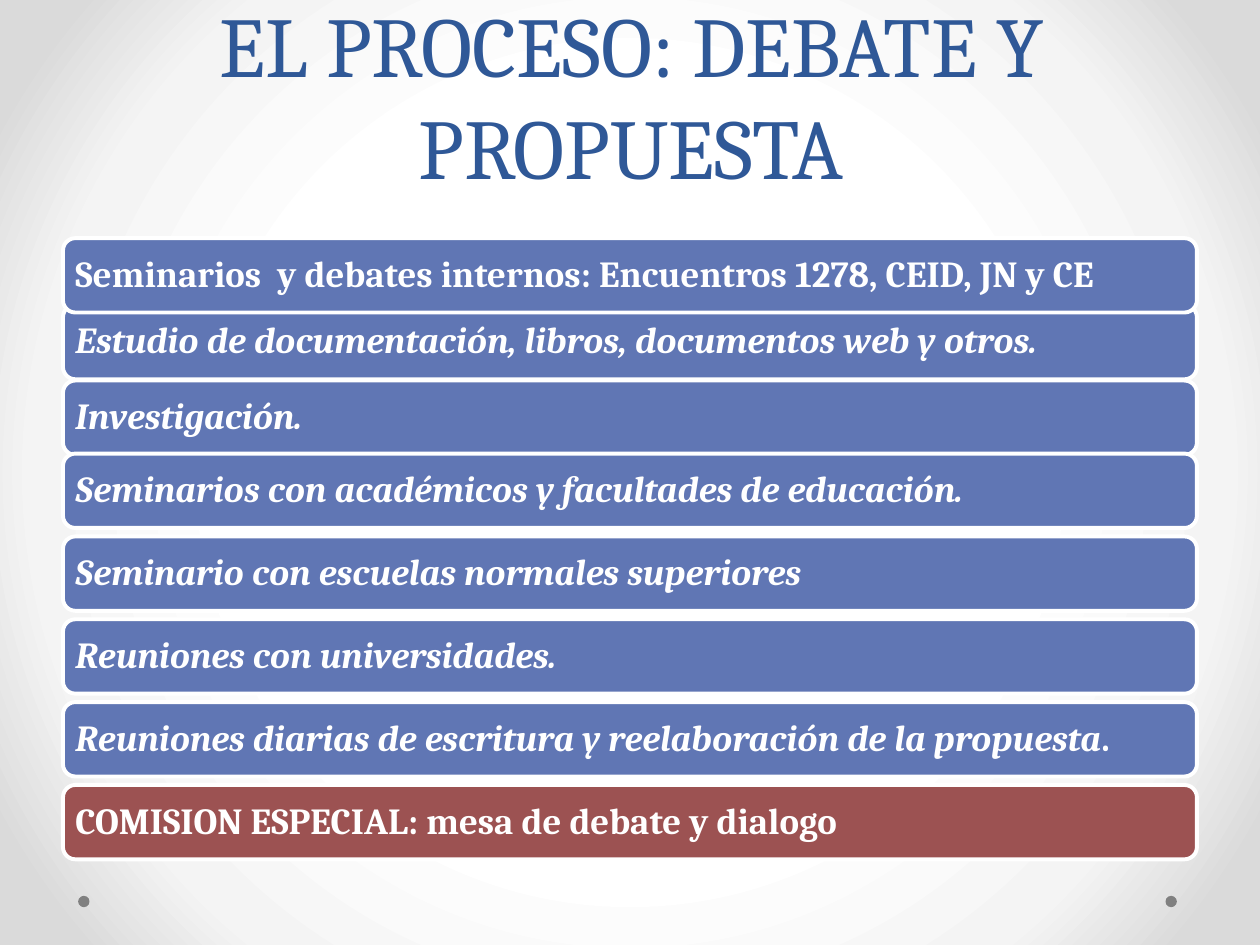
"""Build the slide on the debate and proposal process."""
import pptx
import pptx.dml.color
import pptx.enum.shapes
import pptx.enum.text
import pptx.oxml
import pptx.util
from pptx.util import Inches, Pt

TITLE = "EL PROCESO: DEBATE Y PROPUESTA"
FONT = "Cambria"
BLUE, RED, WHITE, GREY, NAVY = "6076B4", "9C5252", "FFFFFF", "808080", "2F5897"
BACKGROUND_STOPS = [(50, "FFFFFF"), (76, "F4F4F4"), (92, "DADADA")]
DOT_LEFTS = [9.25, 0.62]

OVERLAPPING_STEPS = [
    (2.42, "Estudio de documentación, libros, documentos web y otros.", True),
    (3.02, "Investigación.", True),
    (1.89, "Seminarios  y debates internos: Encuentros 1278, CEID, JN y CE", False),
]
EVEN_STEPS = [
    ("Seminarios con académicos y facultades de educación.", True),
    ("Seminario con escuelas normales superiores", True),
    ("Reuniones con universidades.", True),
    ("Reuniones diarias de escritura y reelaboración de la propuesta", True),
    ("COMISION ESPECIAL: mesa de debate y dialogo", False),
]
EVEN_FIRST, EVEN_LAST = 3.6, 6.23
SHAPES = pptx.enum.shapes.MSO_SHAPE
ANCHOR = pptx.enum.text.MSO_ANCHOR
ALIGN = pptx.enum.text.PP_ALIGN


def color(hex_code):
    return pptx.dml.color.RGBColor.from_string(hex_code)


def set_font(font, size, hex_code, bold=False):
    font.name, font.size, font.bold = FONT, Pt(size), bold
    font.color.rgb = color(hex_code)


def paint_background(page):
    page.background.fill.gradient()
    gradient = page.element.find(".//" + pptx.oxml.ns.qn("a:gradFill"))
    stops = "".join(
        f'<a:gs pos="{position * 1000}"><a:srgbClr val="{code}"/></a:gs>'
        for position, code in BACKGROUND_STOPS
    )
    radial = pptx.oxml.parse_xml(
        f'<a:gradFill {pptx.oxml.ns.nsdecls("a")} rotWithShape="1">'
        f"<a:gsLst>{stops}</a:gsLst>"
        '<a:path path="circle">'
        '<a:fillToRect l="50000" t="50000" r="50000" b="50000"/>'
        "</a:path></a:gradFill>"
    )
    gradient.getparent().replace(gradient, radial)


def add_box(page, kind, left, top, width, height, fill):
    box = page.shapes.add_shape(
        kind, Inches(left), Inches(top), Inches(width), Inches(height)
    )
    box.shadow.inherit = False
    box.fill.solid()
    box.fill.fore_color.rgb = color(fill)
    box.line.fill.background()
    return box


def add_title(page):
    title = page.shapes.title
    title.left, title.top = Inches(0.51), Inches(0.36)
    title.width, title.height = Inches(9), Inches(1.25)
    frame = title.text_frame
    frame.text = TITLE
    frame.word_wrap = True
    frame.auto_size = pptx.enum.text.MSO_AUTO_SIZE.NONE
    frame.vertical_anchor = ANCHOR.BOTTOM
    para = frame.paragraphs[0]
    para.alignment = ALIGN.CENTER
    para.line_spacing = Pt(58)
    set_font(para.font, 48.6, NAVY)


def add_step(page, top, text, italic, fill):
    box = add_box(page, SHAPES.ROUNDED_RECTANGLE, 0.5, top, 9, 0.59, fill)
    box.line.color.rgb = color(WHITE)
    box.line.width = Pt(2.25)
    frame = box.text_frame
    frame.word_wrap = True
    frame.vertical_anchor = ANCHOR.MIDDLE
    frame.margin_left = frame.margin_right = Inches(0.07)
    para = frame.paragraphs[0]
    para.alignment = ALIGN.LEFT
    para.line_spacing = 0.9
    set_font(para.font, 21, WHITE, bold=True)
    para.font.italic = italic
    para.add_run().text = text
    return para


def main():
    deck = pptx.Presentation()
    deck.slide_width, deck.slide_height = Inches(10), Inches(7.5)
    page = deck.slides.add_slide(deck.slide_layouts[5])
    paint_background(page)
    for left in DOT_LEFTS:
        add_box(page, SHAPES.OVAL, left, 7.11, 0.09, 0.09, GREY)
    add_title(page)
    for top, text, italic in OVERLAPPING_STEPS:
        add_step(page, top, text, italic, BLUE)
    pitch = (EVEN_LAST - EVEN_FIRST) / (len(EVEN_STEPS) - 1)
    for index, (text, italic) in enumerate(EVEN_STEPS):
        fill = RED if index == len(EVEN_STEPS) - 1 else BLUE
        para = add_step(page, EVEN_FIRST + index * pitch, text, italic, fill)
        if text.endswith("propuesta"):
            span = para.add_run()
            span.text = "."
            span.font.italic = False
    deck.save("out.pptx")


if __name__ == "__main__":
    main()
